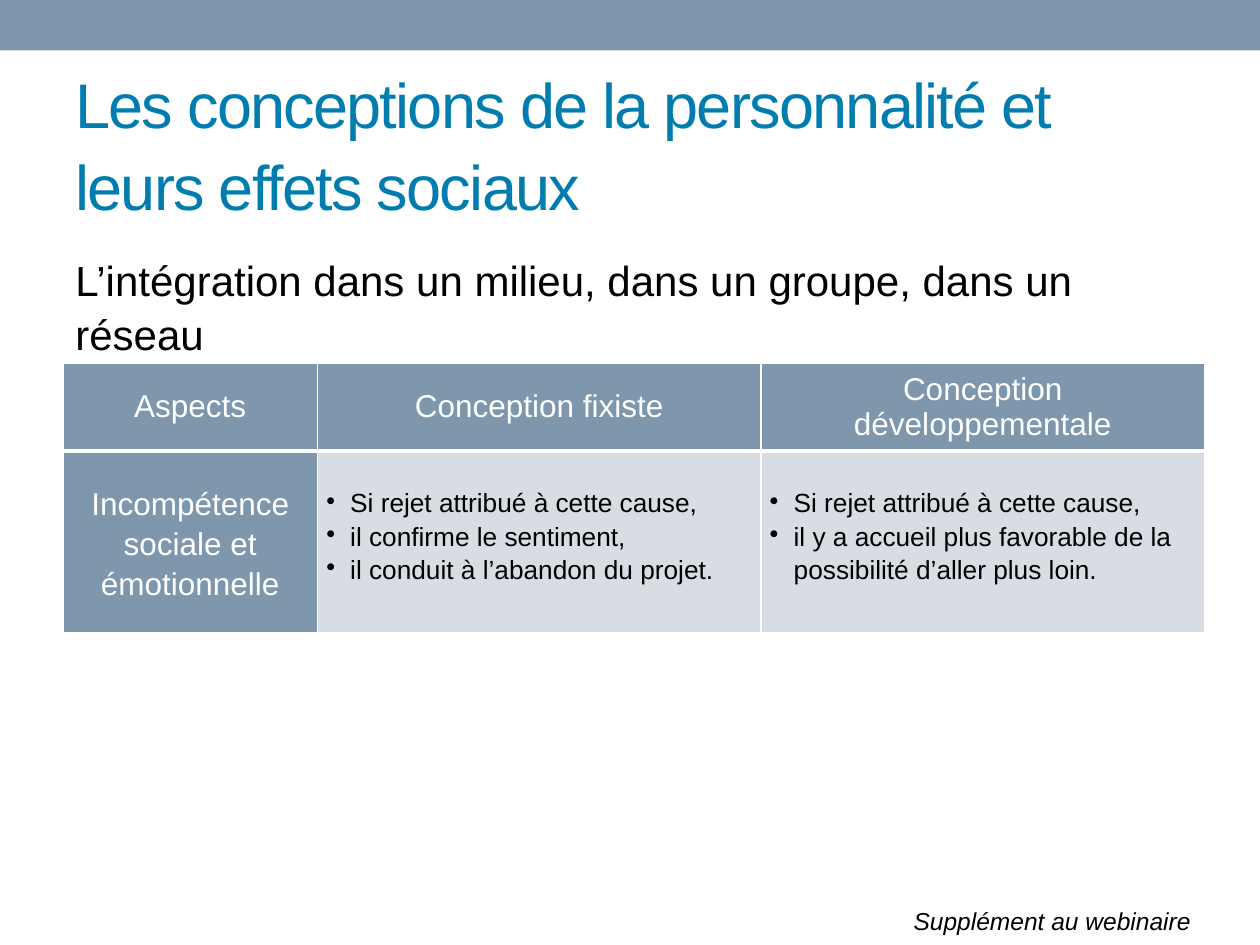
"""Build a slide on conceptions of personality and their social effects."""
from dataclasses import dataclass

from lxml.etree import SubElement
from pptx import Presentation
from pptx.dml.color import RGBColor
from pptx.enum.shapes import MSO_SHAPE
from pptx.enum.text import MSO_ANCHOR, PP_ALIGN
from pptx.oxml.ns import qn
from pptx.slide import Slide
from pptx.util import Inches, Pt

STEEL = RGBColor(0x7E, 0x97, 0xAD)
PALE = RGBColor(0xD8, 0xDD, 0xE3)
BLUE = RGBColor(0x00, 0x7C, 0xAF)
WHITE = RGBColor(0xFF, 0xFF, 0xFF)
BLACK = RGBColor(0x00, 0x00, 0x00)

HEADERS = ["Aspects", "Conception fixiste", "Conception développementale"]
ASPECT = "Incompétence sociale et émotionnelle"
EFFECTS = [
    ["Si rejet attribué à cette cause,",
     "il confirme le sentiment,",
     "il conduit à l’abandon du projet."],
    ["Si rejet attribué à cette cause,",
     "il y a accueil plus favorable de la possibilité d’aller plus loin."],
]


@dataclass
class Deck:
    slide: Slide
    font: str = "Arial"

    def style(self, p, size, color, align=PP_ALIGN.LEFT, spacing=None, italic=False):
        p.font.name = self.font
        p.font.size = Pt(size)
        p.font.color.rgb = color
        p.font.italic = italic
        p.alignment = align
        p.line_spacing = spacing

    def band(self, left, top, width, height, color):
        sp = self.slide.shapes.add_shape(
            MSO_SHAPE.RECTANGLE, Inches(left), Inches(top), Inches(width), Inches(height))
        sp.shadow.inherit = False
        sp.fill.solid()
        sp.fill.fore_color.rgb = color
        sp.line.fill.background()

    def text(self, box, text, size, color, anchor=MSO_ANCHOR.TOP, tracking=0, **style):
        sp = self.slide.shapes.add_textbox(*map(Inches, box))
        tf = sp.text_frame
        tf.word_wrap = True
        tf.vertical_anchor = anchor
        p = tf.paragraphs[0]
        r = p.add_run()
        r.text = text
        self.style(p, size, color, **style)
        if tracking:
            r.font._element.set("spc", str(tracking))

    def table(self, left, top, widths, heights):
        shape = self.slide.shapes.add_table(
            len(heights), len(widths), Inches(left), Inches(top),
            Inches(sum(widths)), Inches(sum(heights)))
        table = shape.table
        for column, width in zip(table.columns, widths):
            column.width = Inches(width)
        for row, height in zip(table.rows, heights):
            row.height = Inches(height)
        return table

    def borders(self, cell, top=1, bottom=1):
        tcPr = cell._tc.get_or_add_tcPr()
        for side, width in (("L", 1), ("R", 1), ("T", top), ("B", bottom)):
            ln = SubElement(tcPr, qn(f"a:ln{side}"), w=str(Pt(width)))
            fill = SubElement(ln, qn("a:solidFill"))
            SubElement(fill, qn("a:srgbClr"), val=str(WHITE))

    def cell(self, cell, lines, fill, size, color, anchor=MSO_ANCHOR.MIDDLE,
             margins=None, edges=(1, 1), bullets=False, **style):
        self.borders(cell, *edges)
        cell.fill.solid()
        cell.fill.fore_color.rgb = fill
        cell.vertical_anchor = anchor
        if margins:
            cell.margin_left = cell.margin_right = Inches(0.07)
            cell.margin_top, cell.margin_bottom = map(Inches, margins)
        tf = cell.text_frame
        tf.text = "\n".join(lines)
        for p in tf.paragraphs:
            self.style(p, size, color, **style)
            if bullets:
                self.bullet(p)

    def bullet(self, p):
        indent = Inches(0.19)
        pPr = p._p.get_or_add_pPr()
        pPr.set("marL", str(indent))
        pPr.set("indent", str(-indent))
        bullet = pPr.makeelement(qn("a:buChar"), {"char": "•"})
        pPr.find(qn("a:defRPr")).addprevious(bullet)


def main():
    prs = Presentation()
    prs.slide_width, prs.slide_height = Inches(10), Inches(7.5)
    s = prs.slides.add_slide(prs.slide_layouts[6])
    deck = Deck(s)

    deck.band(0, 0, 10, 0.4, STEEL)
    deck.text((0.5, 0.58, 9, 1.08),
              "Les conceptions de la personnalité et leurs effets sociaux",
              36, BLUE, MSO_ANCHOR.MIDDLE, tracking=-100, spacing=1.08)
    deck.text((0.5, 1.94, 9, 0.95),
              "L’intégration dans un milieu, dans un groupe, dans un réseau",
              24, BLACK, spacing=1.07)

    table = deck.table(0.5, 2.88, [2.02, 3.52, 3.52], [0.66, 1.44])
    for column, header in enumerate(HEADERS):
        deck.cell(table.cell(0, column), [header], STEEL, 18, WHITE,
                  edges=(1, 3), align=PP_ALIGN.CENTER)
    deck.cell(table.cell(1, 0), [ASPECT], STEEL, 18, WHITE, margins=(0, 0),
              edges=(3, 1), align=PP_ALIGN.CENTER, spacing=1.14)
    for column, lines in enumerate(EFFECTS, start=1):
        deck.cell(table.cell(1, column), lines, PALE, 15, BLACK, MSO_ANCHOR.TOP,
                  margins=(0.27, 0), edges=(3, 1), bullets=True, spacing=1.14)

    deck.text((3.49, 7.14, 6.06, 0.34), "Supplément au webinaire", 14, BLACK,
              align=PP_ALIGN.RIGHT, italic=True)
    prs.save("out.pptx")


if __name__ == "__main__":
    main()
